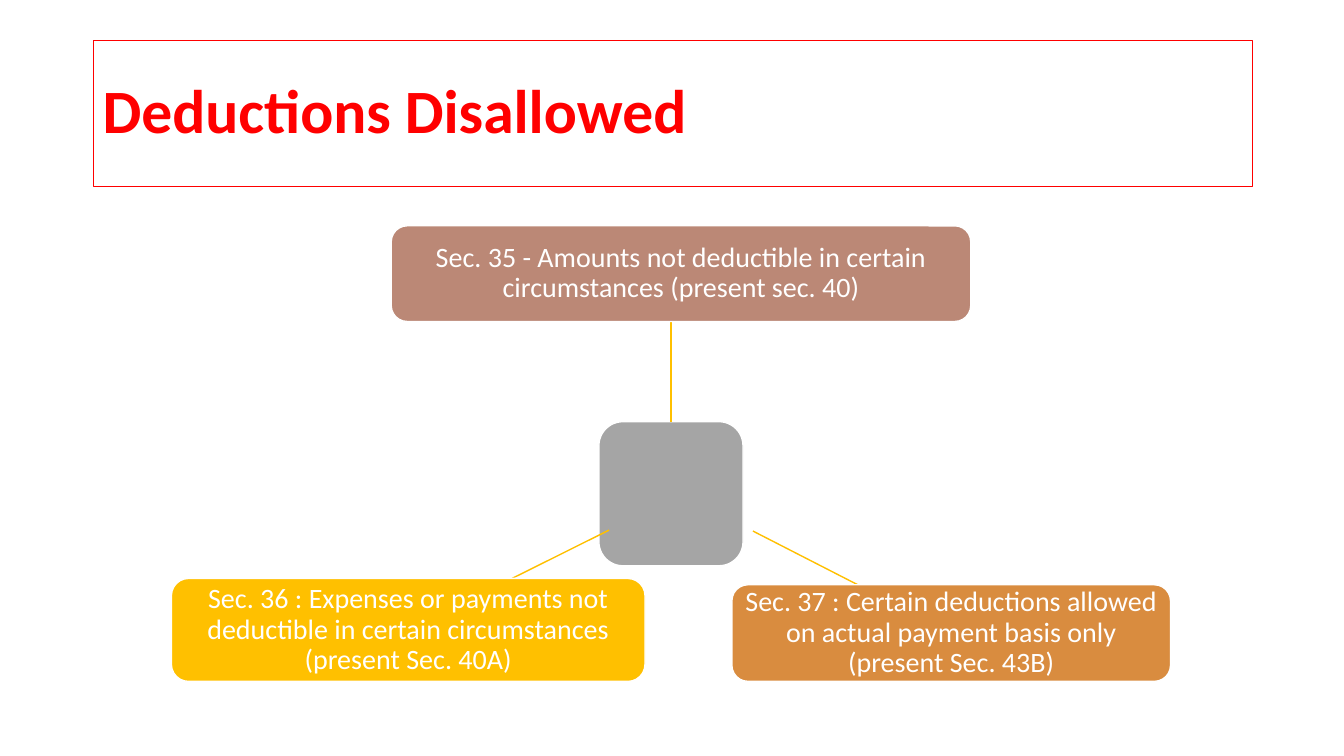
from lxml import etree
from pptx import Presentation
from pptx.dml.color import RGBColor
from pptx.enum.shapes import MSO_CONNECTOR, MSO_SHAPE
from pptx.enum.text import MSO_ANCHOR, PP_ALIGN
from pptx.oxml.ns import qn
from pptx.util import Inches, Pt

RECT, ROUNDED = MSO_SHAPE.RECTANGLE, MSO_SHAPE.ROUNDED_RECTANGLE
STRAIGHT = MSO_CONNECTOR.STRAIGHT
MIDDLE = MSO_ANCHOR.MIDDLE
LEFT, CENTER = PP_ALIGN.LEFT, PP_ALIGN.CENTER
WIDTH, HEIGHT = 13.33, 7.5
SECTIONS = [
    ("Sec. 35 - Amounts not deductible in certain circumstances (present sec. 40)",
     "BB8876", (0.22, 0, 0.58, 0.21), (0.5, 0.21), (0.5, 0.43)),
    ("Sec. 37 : Certain deductions allowed on actual payment basis only (present Sec. 43B)",
     "D98C3F", (0.561, 0.788, 0.439, 0.212), (0.687, 0.788), (0.582, 0.67)),
    ("Sec. 36 : Expenses or payments not deductible in certain circumstances (present Sec. 40A)",
     "FFC000", (0, 0.774, 0.474, 0.226), (0.341, 0.774), (0.438, 0.668)),
]


def color(hex_code):
    """Turn a hex string into a colour."""
    return RGBColor.from_string(hex_code)


def add_box(s, kind, box, fill, line, width):
    """Add a preset shape with the given fill and outline."""
    sp = s.shapes.add_shape(kind, *(Inches(v) for v in box))
    sp.shadow.inherit = False
    if fill:
        sp.fill.solid()
        sp.fill.fore_color.rgb = color(fill)
    else:
        sp.fill.background()
    sp.line.color.rgb = color(line)
    sp.line.width = Pt(width)
    return sp


def write(sp, text, size, hex_code, align, bold=False):
    """Write one wrapped, vertically centred paragraph in a shape."""
    tf = sp.text_frame
    tf.word_wrap = True
    tf.vertical_anchor = MIDDLE
    p = tf.paragraphs[0]
    p.text = text
    p.alignment = align
    p.line_spacing = 0.9
    font = p.runs[0].font
    font.name, font.size, font.bold = "Calibri", Pt(size), bold
    font.color.rgb = color(hex_code)


def add_title(s, box):
    """Draw the outlined title bar."""
    sp = add_box(s, RECT, box, None, "FF0000", 0.25)
    write(sp, "Deductions Disallowed", 44, "FF0000", LEFT, True)


def add_spoke(s, start, end):
    """Draw a line between the hub and a section."""
    line = s.shapes.add_connector(STRAIGHT, *(Inches(v) for v in start + end))
    line.line.color.rgb = color("FFC000")
    line.line.width = Pt(1)
    etree.SubElement(line._element.spPr, qn("a:effectLst"))


def add_diagram(s, box):
    """Draw the hub with its three sections inside the box."""
    left, top, width, height = box

    def point(share):
        return left + share[0] * width, top + share[1] * height

    hub = 1.43
    x, y = point((0.5, 0.43))
    add_box(s, ROUNDED, (x - hub / 2, y, hub, hub), "A5A5A5", "FFFFFF", 1)
    for text, fill, (sx, sy, sw, sh), start, end in SECTIONS:
        add_spoke(s, point(start), point(end))
        sp = add_box(s, ROUNDED, (*point((sx, sy)), sw * width, sh * height),
                     fill, "FFFFFF", 1)
        tf = sp.text_frame
        tf.margin_left = tf.margin_right = Inches(0.06)
        tf.margin_top = tf.margin_bottom = Inches(0.06)
        write(sp, text, 20, "FFFFFF", CENTER)


def main():
    """Build and save the slide."""
    prs = Presentation()
    prs.slide_width, prs.slide_height = Inches(WIDTH), Inches(HEIGHT)
    s = prs.slides.add_slide(prs.slide_layouts[6])
    add_title(s, (0.92, 0.4, 11.5, 1.45))
    add_diagram(s, (1.7, 2.24, 9.91, 4.52))
    prs.save("out.pptx")


if __name__ == "__main__":
    main()
